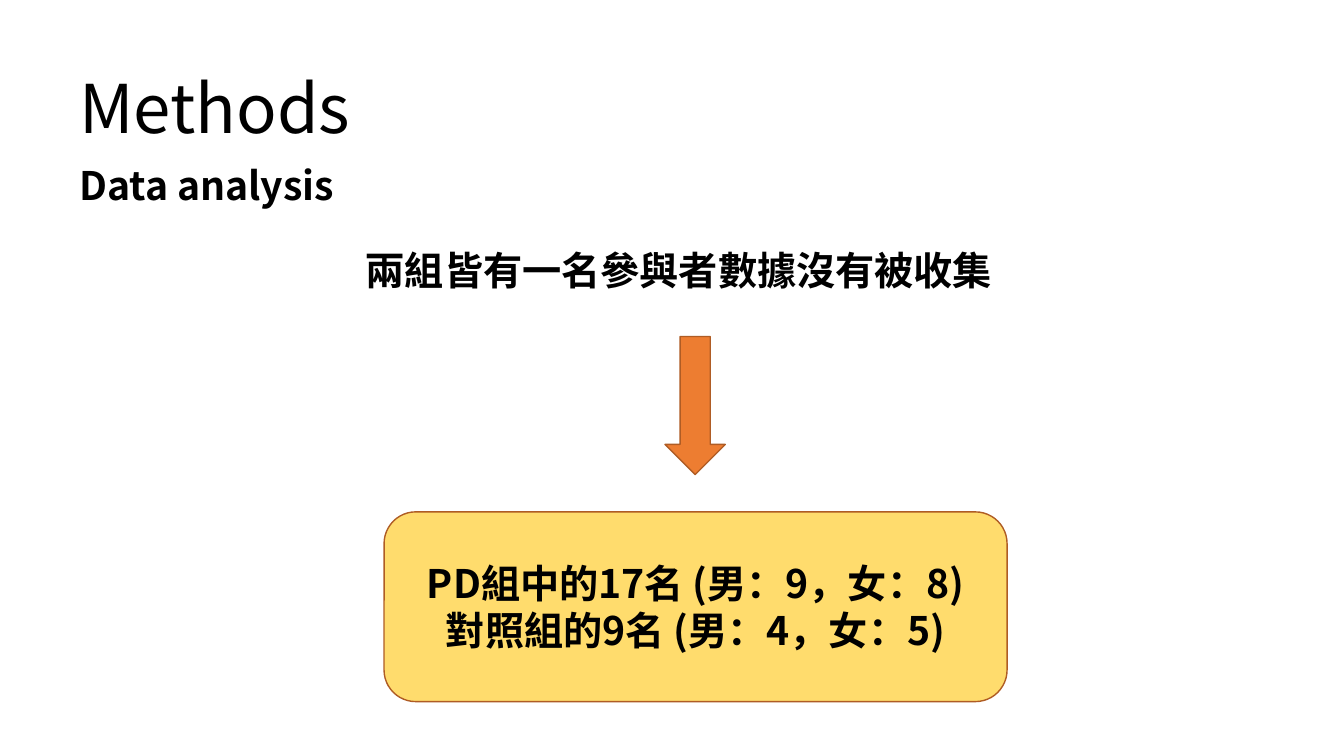
import pptx
import pptx.util
import pptx.dml.color
import pptx.enum.shapes
import pptx.enum.text
import lxml.etree
from pptx.util import Cm

FACE = "Noto Sans CJK SC"
BLACK = pptx.dml.color.RGBColor(0x00, 0x00, 0x00)
GOLD = pptx.dml.color.RGBColor(0xFF, 0xDC, 0x6D)
ORANGE = pptx.dml.color.RGBColor(0xED, 0x7D, 0x31)
BROWN = pptx.dml.color.RGBColor(0xAF, 0x5C, 0x24)
SHAPES = pptx.enum.shapes.MSO_SHAPE
ALIGN = pptx.enum.text.PP_ALIGN
ANCHOR = pptx.enum.text.MSO_ANCHOR


def write(frame, lines, size=28, bold=True, align=ALIGN.LEFT):
    """Fill a text frame with one paragraph for each line."""
    frame.word_wrap = True
    frame.text = "\n".join(lines)
    for para in frame.paragraphs:
        para.alignment = align
        font = para.font
        font.name = FACE
        font.size = pptx.util.Pt(size)
        font.bold = bold
        font.color.rgb = BLACK
        tag = pptx.oxml.ns.qn("a:ea")
        lxml.etree.SubElement(font._element, tag, typeface=FACE)


def label(slide, box, text, **style):
    """Add a text box with a single line."""
    shape = slide.shapes.add_textbox(*map(Cm, box))
    write(shape.text_frame, [text], **style)


def block(slide, kind, box, fill):
    """Add a filled shape with a thin brown outline."""
    shape = slide.shapes.add_shape(kind, *map(Cm, box))
    shape.shadow.inherit = False
    shape.fill.solid()
    shape.fill.fore_color.rgb = fill
    shape.line.color.rgb = BROWN
    shape.line.width = pptx.util.Pt(1)
    return shape


def main():
    """Build the slide and save it."""
    deck = pptx.Presentation()
    deck.slide_width, deck.slide_height = Cm(33.87), Cm(19.05)
    slide = deck.slides.add_slide(deck.slide_layouts[6])

    label(slide, (1.75, 1.55, 30, 2.31), "Methods", size=48, bold=False)
    label(slide, (1.75, 3.94, 8.23, 1.45), "Data analysis")
    label(slide, (8.97, 6.07, 17.12, 1.45), "兩組皆有一名參與者數據沒有被收集")

    block(slide, SHAPES.DOWN_ARROW, (16.76, 8.48, 1.52, 3.48), ORANGE)
    group = block(slide, SHAPES.ROUNDED_RECTANGLE, (9.68, 12.9, 15.7, 4.78), GOLD)
    group.text_frame.vertical_anchor = ANCHOR.MIDDLE
    lines = ["PD組中的17名 (男：9，女：8)", "對照組的9名 (男：4，女：5)"]
    write(group.text_frame, lines, align=ALIGN.CENTER)

    deck.save("out.pptx")


if __name__ == "__main__":
    main()
